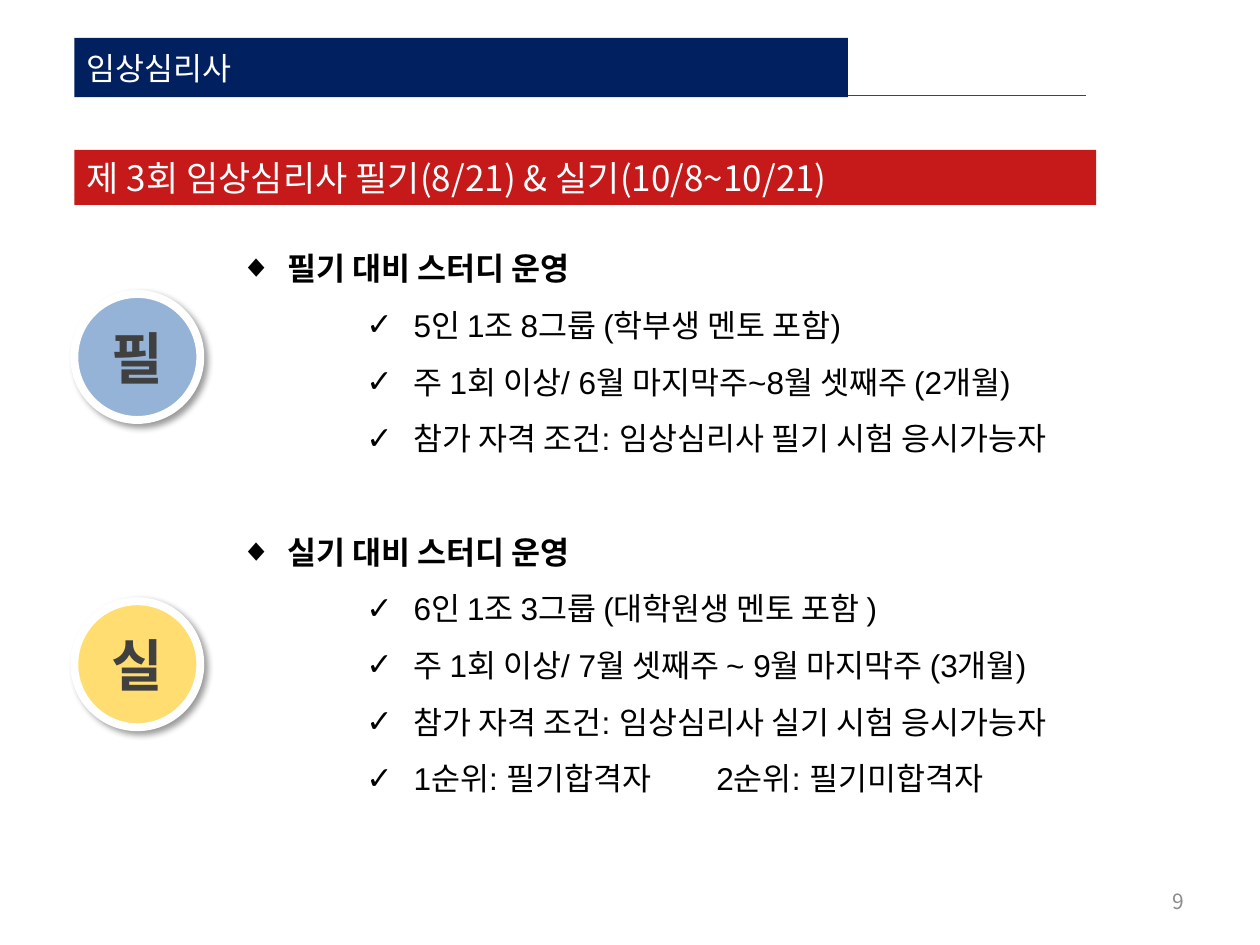
from lxml.etree import SubElement
from pptx import Presentation
from pptx.dml.color import RGBColor
from pptx.enum.shapes import MSO_CONNECTOR as Connector, MSO_SHAPE as Shape
from pptx.enum.text import MSO_ANCHOR as Anchor, MSO_AUTO_SIZE as AutoSize, PP_ALIGN as Align
from pptx.oxml.ns import qn
from pptx.util import Pt

KOREAN = "Noto Sans CJK KR"
LATIN = "Arial"
STUDY_GROUPS = [
    ("필기 대비 스터디 운영", [
        "5인 1조 8그룹 (학부생 멘토 포함)",
        "주 1회 이상/ 6월 마지막주~8월 셋째주 (2개월)",
        "참가 자격 조건: 임상심리사 필기 시험 응시가능자",
    ]),
    ("실기 대비 스터디 운영", [
        "6인 1조 3그룹 (대학원생 멘토 포함 )",
        "주 1회 이상/ 7월 셋째주 ~ 9월 마지막주 (3개월)",
        "참가 자격 조건: 임상심리사 실기 시험 응시가능자",
        "1순위: 필기합격자\t2순위: 필기미합격자",
    ]),
]


def color(value):
    """Turn a hex string into a colour."""
    return RGBColor.from_string(value)


def points(box):
    """Turn a box of plain numbers into lengths."""
    return [Pt(value) for value in box]


def add_node(parent, tag, **attributes):
    """Append a drawing element and return it."""
    return SubElement(parent, qn(tag), {key: str(value) for key, value in attributes.items()})


def add_span(para, text, size, fill, font=KOREAN, bold=False):
    """Add one formatted run to a paragraph."""
    span = para.add_run()
    span.text = text
    span.font.size = Pt(size)
    span.font.bold = bold
    span.font.name = font
    span.font.color.rgb = color(fill)
    add_node(span.font._element, "a:ea", typeface=KOREAN)
    return span


def set_frame(shape, anchor, align):
    """Prepare a text frame and return its first paragraph."""
    frame = shape.text_frame
    frame.word_wrap = True
    frame.auto_size = AutoSize.NONE
    frame.vertical_anchor = anchor
    para = frame.paragraphs[0]
    para.alignment = align
    return para


def add_header(page, box):
    """Place the title bar with the rule running out behind it."""
    left, top, width, height = box
    title = page.shapes.title
    title.left, title.top, title.width, title.height = points(box)
    title.fill.solid()
    title.fill.fore_color.rgb = color("002060")
    add_span(set_frame(title, Anchor.MIDDLE, Align.LEFT), "임상심리사", 18, "FFFFFF")
    rule_y = top + height - 1
    rule = page.shapes.add_connector(
        Connector.STRAIGHT, *points((left + 3, rule_y, left + 578, rule_y)))
    rule.line.color.rgb = color("1F497D")
    rule.line.width = Pt(0.75)
    add_node(rule._element.spPr, "a:effectLst")
    title.element.addprevious(rule.element)


def add_banner(page, box):
    """Place the slightly transparent red exam banner."""
    banner = page.shapes.add_shape(Shape.RECTANGLE, *points(box))
    banner.shadow.inherit = False
    banner.fill.solid()
    banner.fill.fore_color.rgb = color("C00000")
    banner.line.fill.background()
    fill = banner._element.spPr.find(qn("a:solidFill"))
    add_node(fill[0], "a:alpha", val=90000)
    para = set_frame(banner, Anchor.TOP, Align.LEFT)
    add_span(para, "제 3회 임상심리사 필기(8/21) & 실기(10/8~10/21)", 20, "FFFFFF")


def add_bullet(para, text, symbol, indent, bold=False):
    """Fill a paragraph as a bulleted line with a hanging indent."""
    para.line_spacing = 1.5
    properties = para._p.get_or_add_pPr()
    properties.set("marL", str(Pt(indent)))
    properties.set("indent", str(-Pt(27)))
    add_node(properties, "a:buFont", typeface=LATIN)
    add_node(properties, "a:buChar", char=symbol)
    if "\t" in text:
        add_node(add_node(properties, "a:tabLst"), "a:tab", pos=Pt(272), algn="l")
    add_span(para, text, 18, "000000", LATIN, bold)


def add_study_list(page, box):
    """Place the study groups, each a heading with its conditions."""
    area = page.shapes.add_textbox(*points(box))
    para = set_frame(area, Anchor.TOP, Align.LEFT)
    for number, (heading, conditions) in enumerate(STUDY_GROUPS):
        if number:
            para = area.text_frame.add_paragraph()
            para.space_before = Pt(32.4)
        add_bullet(para, heading, "◆", 27, True)
        for condition in conditions:
            para = area.text_frame.add_paragraph()
            para.level = 2
            add_bullet(para, condition, "✓", 99)


def add_badge(page, box, label, fill):
    """Place a round badge with a white rim and a soft shadow."""
    badge = page.shapes.add_shape(Shape.OVAL, *points(box))
    badge.fill.solid()
    badge.fill.fore_color.rgb = color(fill)
    badge.line.color.rgb = color("FFFFFF")
    badge.line.width = Pt(4.5)
    badge.shadow.inherit = False
    effects = badge._element.spPr.find(qn("a:effectLst"))
    shadow = add_node(effects, "a:outerShdw", blurRad=Pt(4), dist=Pt(3), dir=2700000,
                      algn="tl", rotWithShape=0)
    add_node(add_node(shadow, "a:srgbClr", val="000000"), "a:alpha", val=40000)
    span = add_span(set_frame(badge, Anchor.MIDDLE, Align.CENTER), label, 32, "404040", bold=True)
    outline = add_node(span.font._element, "a:ln", w=Pt(1.5))
    add_node(add_node(outline, "a:solidFill"), "a:srgbClr", val="FFFFFF")
    span.font._element.insert(0, outline)


def add_page_number(page, box, number):
    """Place the page number at the bottom right."""
    area = page.shapes.add_textbox(*points(box))
    add_span(set_frame(area, Anchor.MIDDLE, Align.RIGHT), number, 12, "8C8C8C")


def main():
    """Build the slide and save it."""
    deck = Presentation()
    deck.slide_width, deck.slide_height = Pt(720), Pt(540)
    page = deck.slides.add_slide(deck.slide_layouts.get_by_name("Title Only"))
    left = 42.5
    add_header(page, (left, 21.6, 442, 34))
    add_banner(page, (left, 85.6, 584, 31.5))
    add_study_list(page, (130.3, 128, 643.7, 334))
    add_badge(page, (left, 168, 72, 72), "필", "95B3D7")
    add_badge(page, (left, 343.6, 72, 72), "실", "FFDD71")
    add_page_number(page, (516, 500.5, 168, 28.75), "9")
    deck.save("out.pptx")


if __name__ == "__main__":
    main()
